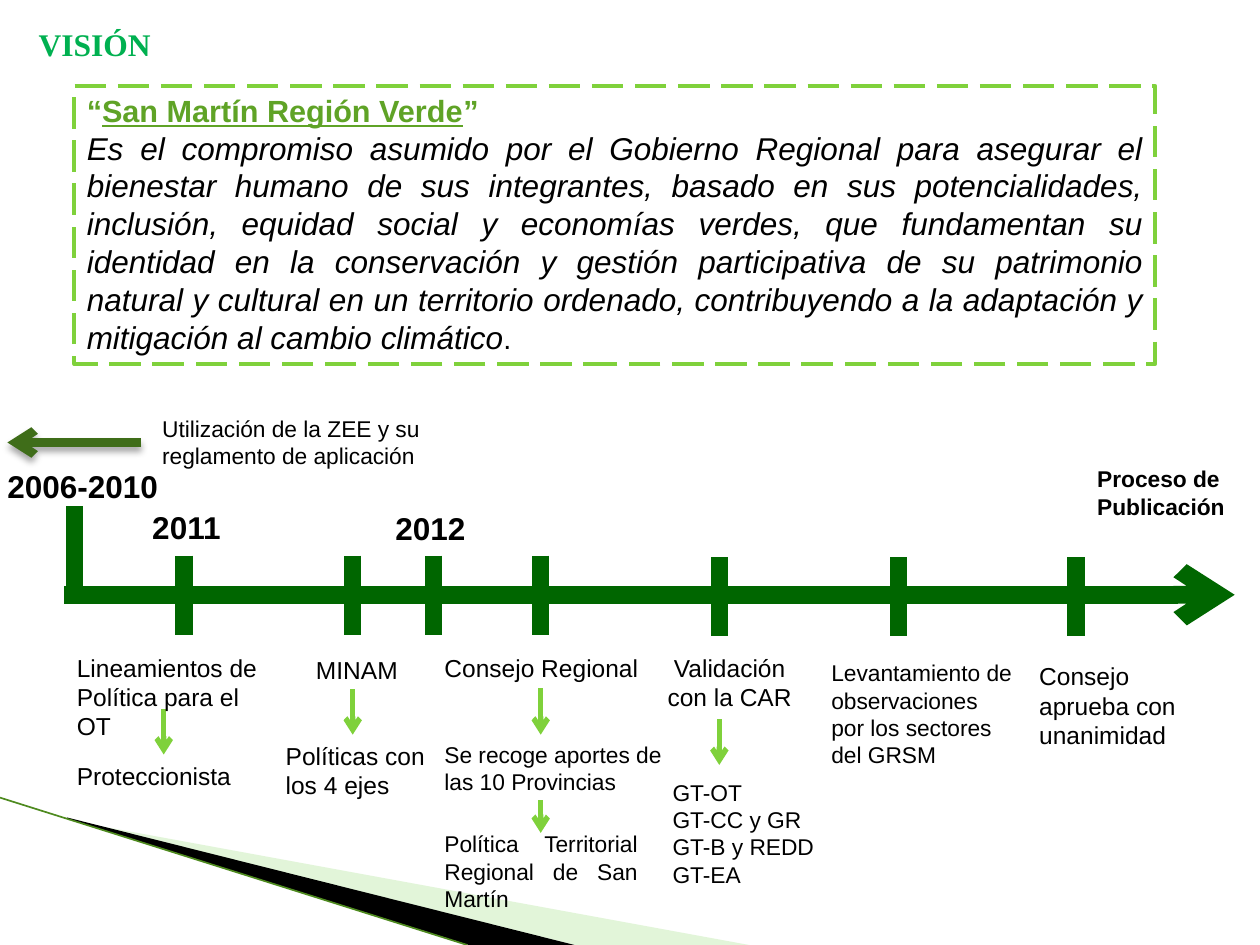
from lxml import etree
from pptx import Presentation
from pptx.dml.color import RGBColor
from pptx.enum.dml import MSO_LINE
from pptx.enum.shapes import MSO_CONNECTOR, MSO_SHAPE
from pptx.enum.text import MSO_ANCHOR, MSO_AUTO_SIZE, PP_ALIGN
from pptx.oxml.ns import qn
from pptx.util import Cm, Pt

STRAIGHT = MSO_CONNECTOR.STRAIGHT
RECTANGLE = MSO_SHAPE.RECTANGLE
LONG_DASH = MSO_LINE.LONG_DASH
TOP = MSO_ANCHOR.TOP
GROW = MSO_AUTO_SIZE.SHAPE_TO_FIT_TEXT
LEFT, CENTER, JUSTIFY = PP_ALIGN.LEFT, PP_ALIGN.CENTER, PP_ALIGN.JUSTIFY

DARK_GREEN, LIGHT_GREEN, BLACK = "006600", "7FD13B", "000000"

VISION_NAME = [
    ("“", {}),
    ("San Martín Región Verde", {"underline": True}),
    ("”", {}),
]
VISION_BODY = [
    ("Es el compromiso asumido por el Gobierno Regional para asegurar el "
     "bienestar humano de sus integrantes, basado en sus potencialidades, "
     "inclusión, equidad social y economías verdes, que fundamentan su "
     "identidad en la conservación y gestión participativa de su patrimonio "
     "natural y cultural en un territorio ordenado, contribuyendo a la "
     "adaptación y mitigación al cambio climático", {"italic": True}),
    (".", {"size": 16.5}),
]

YEAR = {"size": 18, "bold": True, "wrap": False}
STEP = {"size": 14}
SHORT_STEP = {"size": 14, "wrap": False}
DETAIL = {"size": 13}

LABELS = [
    (["VISIÓN"], (0.53, 0.38, 4.75, 1.02),
     {**YEAR, "font": "Times New Roman", "color": "00B050"}),
    (["2006-2010"], (-0.1, 9.3, 3.58, 1.02), YEAR),
    (["2011"], (2.82, 10.11, 1.88, 1.02), YEAR),
    (["2012"], (7.72, 10.13, 1.93, 1.02), YEAR),
    (["Utilización de la ZEE y su reglamento de aplicación"],
     (3.02, 8.23, 6.17, 1.37), DETAIL),
    (["Proceso de Publicación"], (21.87, 9.25, 3.23, 1.37),
     {**DETAIL, "bold": True}),
    (["Lineamientos de Política para el OT"], (1.3, 13.03, 4.6, 1.45), STEP),
    (["Proteccionista"], (1.3, 15.21, 3.63, 0.86), SHORT_STEP),
    (["MINAM"], (6.12, 13.08, 2.18, 0.86), SHORT_STEP),
    (["Políticas con los 4 ejes"], (5.51, 14.81, 3.38, 1.45), STEP),
    (["Consejo Regional"], (8.71, 13.03, 4.45, 0.86), SHORT_STEP),
    (["Se recoge aportes de las 10 Provincias"],
     (8.71, 14.81, 5.0, 1.37), DETAIL),
    (["Política Territorial Regional de San Martín"],
     (8.71, 16.61, 4.39, 1.93), {**DETAIL, "align": JUSTIFY}),
    (["Validación con la CAR"], (13.11, 13.03, 3.2, 1.45),
     {**STEP, "align": CENTER}),
    (["GT-OT", "GT-CC y GR", "GT-B y REDD", "GT-EA"],
     (13.31, 15.57, 3.81, 2.49), DETAIL),
    (["Levantamiento de observaciones por los sectores del GRSM"],
     (16.51, 13.16, 4.19, 2.49), DETAIL),
    (["Consejo aprueba con unanimidad"], (20.7, 13.21, 3.38, 2.06), STEP),
]

AXIS = (1.3, 24.89, 11.99)
TICK_HEIGHT = 1.6
TICKS = [(1.5, 10.21), (3.71, 11.2), (7.11, 11.2), (8.74, 11.2), (10.9, 11.2),
         (14.5, 11.23), (18.11, 11.23), (21.69, 11.23)]
STEP_ARROWS = [(3.3, 14.3, 15.21), (7.11, 13.89, 14.81), (10.9, 13.87, 14.81),
               (10.9, 16.13, 16.79), (14.5, 14.5, 15.42)]
FANS = [
    ([(1.4, 16.54), (15.1, 19.05), (11.58, 19.05), (1.4, 16.51)], "B8E7A1", 40),
    ([(1.35, 16.48), (11.58, 19.05), (9.45, 19.05), (1.37, 16.51)], BLACK, 100),
]

presentation = Presentation()
presentation.slide_width, presentation.slide_height = Cm(25.4), Cm(19.05)
slide = presentation.slides.add_slide(presentation.slide_layouts[6])
shapes = slide.shapes


def rgb(value):
    return RGBColor.from_string(value)


def add_child(parent, tag, **attributes):
    return etree.SubElement(parent, qn(tag), attributes)


def write(paragraph, text, size=14, color=BLACK, font="Arial", bold=False,
          italic=False, underline=False, align=LEFT):
    paragraph.alignment = align
    run = paragraph.add_run()
    run.text = text
    run.font.size, run.font.name = Pt(size), font
    run.font.bold, run.font.italic, run.font.underline = bold, italic, underline
    run.font.color.rgb = rgb(color)


def add_label(paragraphs, place, wrap=True, **style):
    frame = shapes.add_textbox(*map(Cm, place)).text_frame
    frame.word_wrap = wrap
    frame.auto_size = GROW
    for index, text in enumerate(paragraphs):
        paragraph = frame.add_paragraph() if index else frame.paragraphs[0]
        write(paragraph, text, **style)


def add_line(start, end, color, width, arrow=False, shadow=False):
    line = shapes.add_connector(STRAIGHT, *map(Cm, (*start, *end)))
    line.line.color.rgb = rgb(color)
    line.line.width = Pt(width)
    if arrow:
        add_child(line.line._get_or_add_ln(), "a:tailEnd", type="arrow")
    effects = add_child(line._element.spPr, "a:effectLst")
    if shadow:
        outer = add_child(effects, "a:outerShdw", blurRad=str(Pt(4)),
                          dist=str(Pt(3)), dir="5400000", rotWithShape="0")
        black = add_child(outer, "a:srgbClr", val=BLACK)
        add_child(black, "a:alpha", val="35000")


def add_fan(points, color, opacity):
    corners = [(Cm(x), Cm(y)) for x, y in points]
    builder = shapes.build_freeform(*corners[0])
    builder.add_line_segments(corners[1:], close=True)
    fan = builder.convert_to_shape()
    fan.shadow.inherit = False
    fan.fill.solid()
    fan.fill.fore_color.rgb = rgb(color)
    fan.line.fill.background()
    if opacity < 100:
        tint = fan._element.spPr.find(".//" + qn("a:srgbClr"))
        add_child(tint, "a:alpha", val=str(opacity * 1000))


def add_vision():
    vision = shapes.add_shape(RECTANGLE, Cm(1.5), Cm(1.73), Cm(21.79), Cm(5.61))
    vision.shadow.inherit = False
    vision.fill.background()
    vision.line.color.rgb = rgb(LIGHT_GREEN)
    vision.line.width = Pt(2.25)
    vision.line.dash_style = LONG_DASH
    frame = vision.text_frame
    frame.word_wrap, frame.auto_size = True, GROW
    frame.vertical_anchor = TOP
    for text, style in VISION_NAME:
        write(frame.paragraphs[0], text, size=17.5, color="5FA326", bold=True,
              **style)
    body = frame.add_paragraph()
    for text, style in VISION_BODY:
        write(body, text, **{"size": 18, "align": JUSTIFY, **style})


for fan in FANS:
    add_fan(*fan)
add_line((0, 16.08), (9.42, 19.05), "4E8A1F", 0.95)
add_vision()

axis_start, axis_end, axis_y = AXIS
add_line((axis_start, axis_y), (axis_end, axis_y), DARK_GREEN, 10, arrow=True)
for x, top in TICKS:
    add_line((x, top), (x, top + TICK_HEIGHT), DARK_GREEN, 10)
for x, top, bottom in STEP_ARROWS:
    add_line((x, top), (x, bottom), LIGHT_GREEN, 3, arrow=True)
add_line((2.84, 8.92), (0.15, 8.92), "3F6D19", 5, arrow=True, shadow=True)

for paragraphs, place, style in LABELS:
    add_label(paragraphs, place, **style)

presentation.save("out.pptx")
